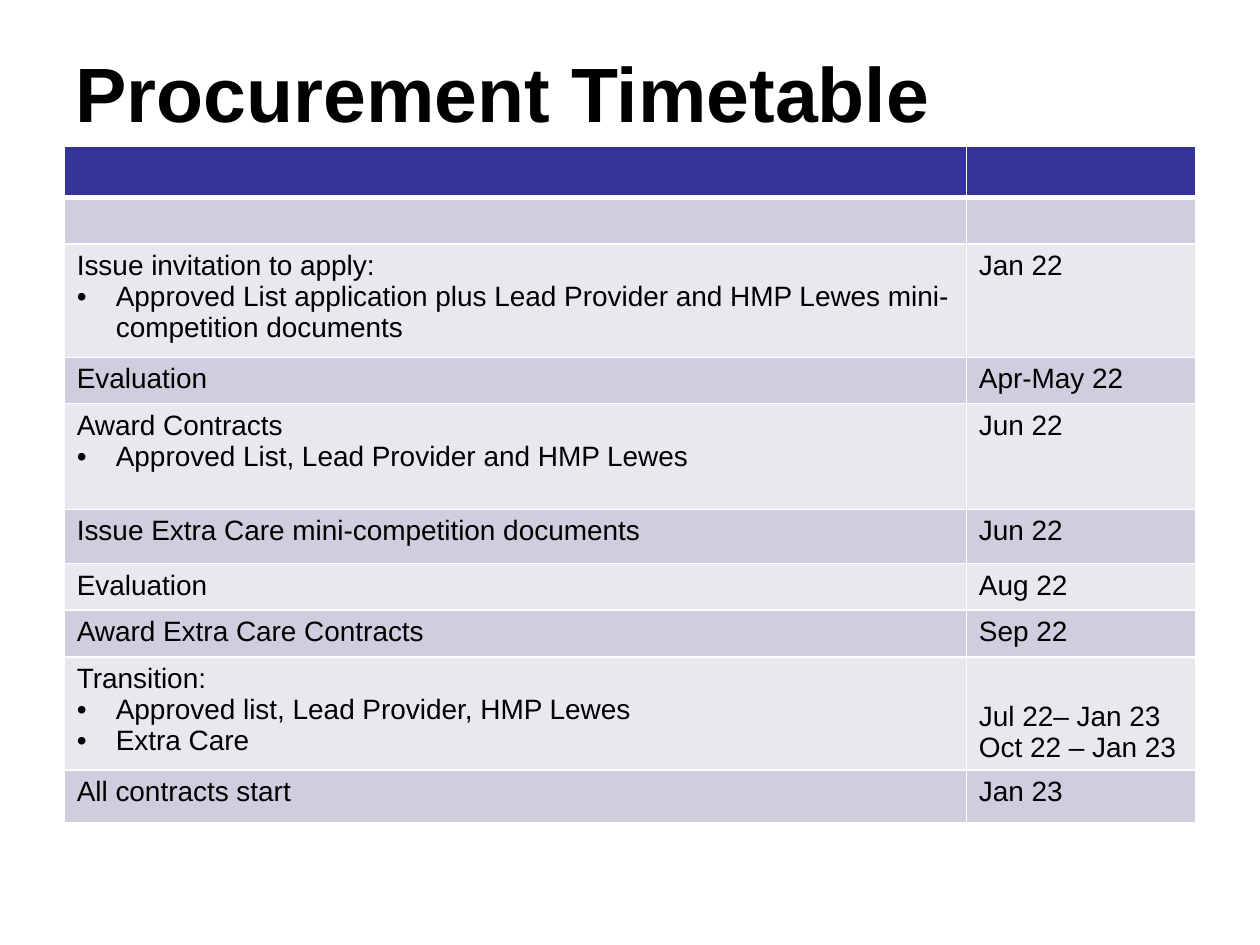
from lxml.etree import SubElement
from pptx import Presentation
from pptx.dml.color import RGBColor
from pptx.enum.text import MSO_ANCHOR
from pptx.oxml.ns import qn
from pptx.util import Inches, Pt

BLACK = RGBColor(0x00, 0x00, 0x00)
NAVY = RGBColor(0x33, 0x33, 0x99)
DARK = RGBColor(0xCE, 0xCE, 0xDE)
LIGHT = RGBColor(0xE8, 0xE8, 0xEF)
FONT = "Arial"
BULLET = "• "

# Row height, step lines, date lines
ROWS = [
    (0.41, [], []),
    (0.35, [], []),
    (0.84, ["Issue invitation to apply:",
            "• Approved List application plus Lead Provider and HMP Lewes "
            "mini-competition documents"], ["Jan 22"]),
    (0.34, ["Evaluation"], ["Apr-May 22"]),
    (0.84, ["Award Contracts",
            "• Approved List, Lead Provider and HMP Lewes"], ["Jun 22"]),
    (0.43, ["Issue Extra Care mini-competition documents"], ["Jun 22"]),
    (0.37, ["Evaluation"], ["Aug 22"]),
    (0.37, ["Award Extra Care Contracts"], ["Sep 22"]),
    (0.87, ["Transition:", "• Approved list, Lead Provider, HMP Lewes",
            "• Extra Care"], ["Jul 22– Jan 23", "Oct 22 – Jan 23"]),
    (0.42, ["All contracts start"], ["Jan 23"]),
]
WIDTHS = [7.16, 1.82]


def set_edges(cell, row):
    """White cell borders, thicker between the header and the body."""
    props = cell._tc.get_or_add_tcPr()
    for side in ("L", "R", "T", "B"):
        thick = (row, side) in ((0, "B"), (1, "T"))
        line = SubElement(props, qn(f"a:ln{side}"), w=str(Pt(3 if thick else 1)))
        SubElement(SubElement(line, qn("a:solidFill")), qn("a:srgbClr"), val="FFFFFF")


def write_lines(cell, lines):
    """One paragraph a line; a leading bullet becomes a real one."""
    frame = cell.text_frame
    for i, line in enumerate(lines):
        para = frame.add_paragraph() if i else frame.paragraphs[0]
        if line.startswith(BULLET):
            props = para._p.get_or_add_pPr()
            props.set("marL", str(Inches(0.31)))
            props.set("indent", str(Inches(-0.31)))
            SubElement(props, qn("a:buFont"), typeface=FONT)
            SubElement(props, qn("a:buChar"), char="•")
        para.text = line.removeprefix(BULLET)
        font = para.runs[0].font
        font.name, font.size, font.bold = FONT, Pt(16), False
        font.color.rgb = BLACK
    if not lines:
        SubElement(frame.paragraphs[0]._p, qn("a:endParaRPr"), sz="1600")


prs = Presentation()
prs.slide_width, prs.slide_height = Inches(10), Inches(7.5)
slide = prs.slides.add_slide(prs.slide_layouts[6])

# Title
title = slide.shapes.add_textbox(Inches(0.5), Inches(0.3), Inches(9), Inches(0.85))
frame = title.text_frame
frame.word_wrap = True
frame.vertical_anchor = MSO_ANCHOR.MIDDLE
frame.text = "Procurement Timetable"
font = frame.paragraphs[0].runs[0].font
font.name, font.size, font.bold = FONT, Pt(44), True
font.color.rgb = BLACK

# Timetable
height = sum(row[0] for row in ROWS)
table = slide.shapes.add_table(len(ROWS), len(WIDTHS), Inches(0.51), Inches(1.16),
                               Inches(sum(WIDTHS)), Inches(height)).table
for col, width in zip(table.columns, WIDTHS):
    col.width = Inches(width)

for r, (height, *texts) in enumerate(ROWS):
    table.rows[r].height = Inches(height)
    for c, lines in enumerate(texts):
        cell = table.cell(r, c)
        set_edges(cell, r)
        cell.fill.solid()
        cell.fill.fore_color.rgb = NAVY if r == 0 else DARK if r % 2 else LIGHT
        write_lines(cell, lines)

# Transition dates line up with the bullets beside them
table.cell(8, 1).vertical_anchor = MSO_ANCHOR.BOTTOM

prs.save("out.pptx")
